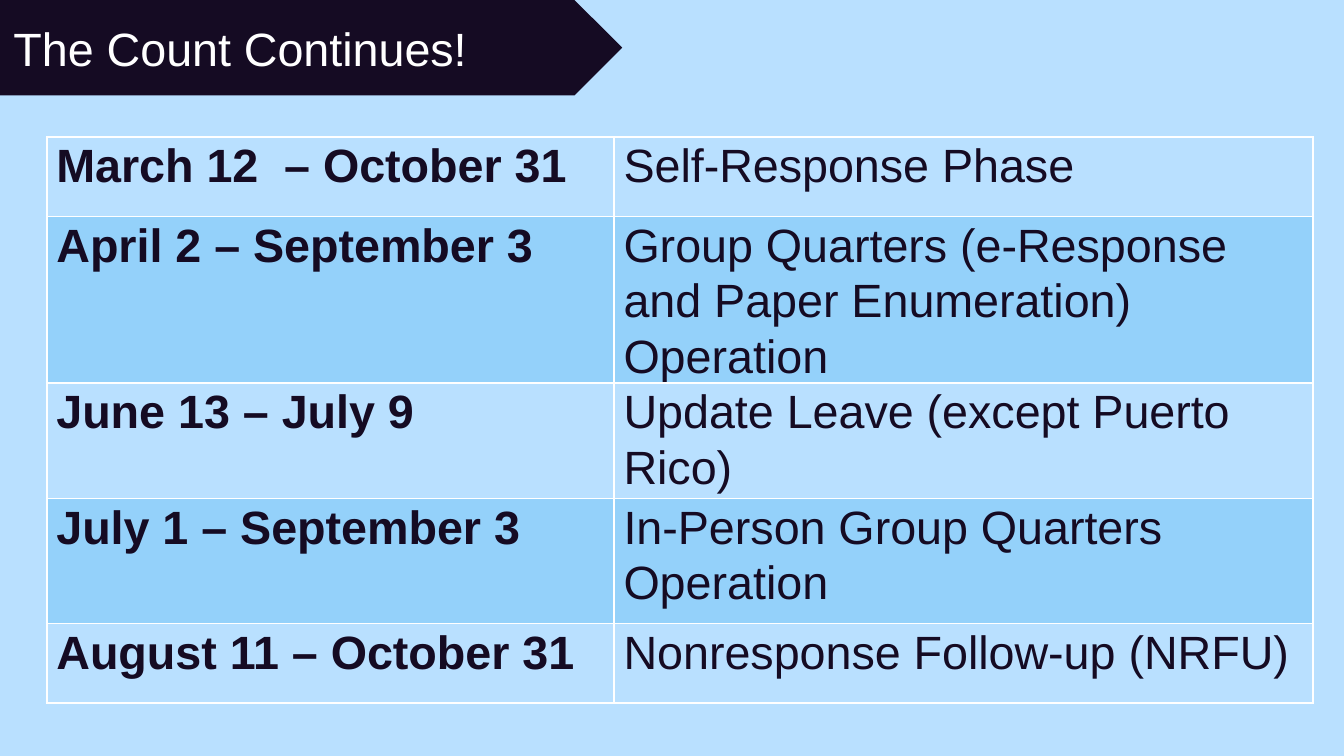
from lxml.etree import SubElement
from pptx import Presentation
from pptx.dml.color import RGBColor
from pptx.enum.shapes import MSO_SHAPE
from pptx.enum.text import MSO_ANCHOR, MSO_AUTO_SIZE, PP_ALIGN
from pptx.oxml.ns import qn
from pptx.util import Inches, Pt

COLORS = {"sky": "B9E0FF", "ink": "150B23", "white": "FFFFFF", "band": "0099E8"}
SLIDE_WIDTH = Inches(10)
SLIDE_HEIGHT = SLIDE_WIDTH * 9 // 16
COLUMN_WIDTHS = [4.22, 5.2]
ROW_HEIGHTS = [0.59, 1.24, 0.86, 0.93, 0.59]
BAND_OPACITY = 20
BORDER_WIDTH = Pt(1)
TEXT_FORMAT = {"name": "Arial", "size": Pt(25)}
BANNER = {"left": 0, "top": 0, "width": Inches(4.63), "height": Inches(0.71)}
TITLE_FRAME = {
    "vertical_anchor": MSO_ANCHOR.MIDDLE,
    "auto_size": MSO_AUTO_SIZE.NONE,
    "word_wrap": True,
    "margin_left": Inches(0.1),
    "margin_right": Inches(0.1),
}
CELL_MARGINS = {
    "margin_left": Inches(0.07),
    "margin_right": Inches(0.07),
    "margin_top": 0,
    "margin_bottom": 0,
}
SCHEDULE = [
    ("March 12  – October 31", "Self-Response Phase"),
    ("April 2 – September 3", "Group Quarters (e-Response and Paper Enumeration) Operation"),
    ("June 13 – July 9", "Update Leave (except Puerto Rico)"),
    ("July 1 – September 3", "In-Person Group Quarters Operation"),
    ("August 11 – October 31", "Nonresponse Follow-up (NRFU)"),
]


def set_attributes(target, values):
    for name, value in values.items():
        setattr(target, name, value)


def paint(fill, color):
    fill.solid()
    fill.fore_color.rgb = RGBColor.from_string(COLORS[color])


def write(text_frame, text, color, bold):
    text_frame.text = text
    paragraph = text_frame.paragraphs[0]
    paragraph.alignment = PP_ALIGN.LEFT
    font = paragraph.runs[0].font
    set_attributes(font, TEXT_FORMAT | {"bold": bold})
    font.color.rgb = RGBColor.from_string(COLORS[color])
    return paragraph


def add_banner(slide):
    """Add the arrow that lies behind the title."""
    banner = slide.shapes.add_shape(MSO_SHAPE.PENTAGON, **BANNER)
    banner.shadow.inherit = False
    paint(banner.fill, "ink")
    banner.line.fill.background()
    slide.shapes.title.element.addprevious(banner.element)


def set_title(slide, text):
    title = slide.shapes.title
    set_attributes(title, BANNER)
    set_attributes(title.text_frame, TITLE_FRAME)
    write(title.text_frame, text, "white", bold=False)


def add_borders(cell):
    properties = cell._tc.get_or_add_tcPr()
    for side in ("lnL", "lnR", "lnT", "lnB"):
        border = SubElement(properties, qn(f"a:{side}"), w=str(BORDER_WIDTH))
        solid = SubElement(border, qn("a:solidFill"))
        SubElement(solid, qn("a:srgbClr"), val=COLORS["white"])


def fill_band(cell, banded):
    if not banded:
        cell.fill.background()
        return
    paint(cell.fill, "band")
    color = cell._tc.tcPr.find(f"{qn('a:solidFill')}/{qn('a:srgbClr')}")
    SubElement(color, qn("a:alpha"), val=str(BAND_OPACITY * 1000))


def add_schedule(slide, schedule):
    table = slide.shapes.add_table(
        len(schedule), len(COLUMN_WIDTHS), Inches(0.35), Inches(1.02),
        Inches(sum(COLUMN_WIDTHS)), Inches(sum(ROW_HEIGHTS))).table
    set_attributes(table, {"first_row": False, "horz_banding": False})
    for column, width in zip(table.columns, COLUMN_WIDTHS):
        column.width = Inches(width)
    for row, height in zip(table.rows, ROW_HEIGHTS):
        row.height = Inches(height)
    for row_index, entry in enumerate(schedule):
        for column_index, text in enumerate(entry):
            cell = table.cell(row_index, column_index)
            set_attributes(cell, CELL_MARGINS)
            add_borders(cell)
            fill_band(cell, banded=row_index % 2 == 1)
            paragraph = write(cell.text_frame, text, "ink", bold=column_index == 0)
            paragraph.line_spacing = 1.07


def main():
    presentation = Presentation()
    set_attributes(presentation, {"slide_width": SLIDE_WIDTH, "slide_height": SLIDE_HEIGHT})
    slide = presentation.slides.add_slide(presentation.slide_layouts.get_by_name("Title Only"))
    paint(slide.background.fill, "sky")
    add_banner(slide)
    set_title(slide, "The Count Continues!")
    add_schedule(slide, SCHEDULE)
    presentation.save("out.pptx")


if __name__ == "__main__":
    main()
